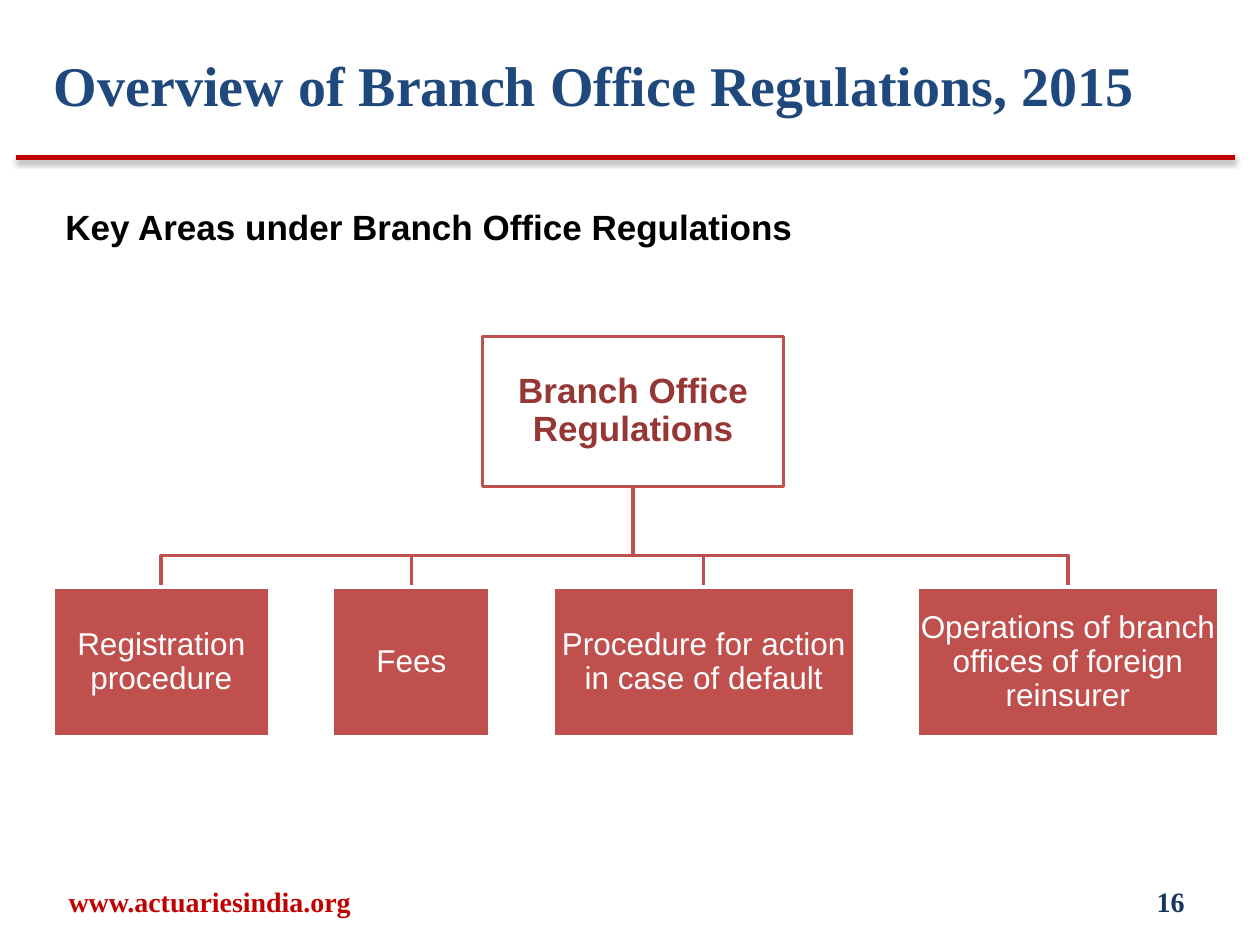
from dataclasses import dataclass
from lxml.etree import SubElement
from pptx import Presentation
from pptx.dml.color import RGBColor
from pptx.enum.shapes import MSO_CONNECTOR, MSO_SHAPE
from pptx.enum.text import MSO_ANCHOR, PP_ALIGN
from pptx.oxml import parse_xml
from pptx.oxml.ns import nsdecls, qn
from pptx.util import Inches, Pt


@dataclass(frozen=True)
class Theme:
    serif: str = "Times New Roman"
    sans: str = "Arial"
    navy: str = "1F497D"
    deep: str = "17375E"
    red: str = "C00000"
    brick: str = "C0504D"
    wine: str = "953735"
    white: str = "FFFFFF"
    black: str = "000000"
    title: int = 32
    head: int = 20
    leaf: int = 18
    foot: int = 16
    rule: int = 3
    edge: int = 2


T = Theme()
LEFT, MID, RIGHT = PP_ALIGN.LEFT, PP_ALIGN.CENTER, PP_ALIGN.RIGHT
TOP, CORE = MSO_ANCHOR.TOP, MSO_ANCHOR.MIDDLE

LABELS = [
    ("Overview of Branch Office Regulations, 2015", (0.33, 0.33, 8.92, 0.67),
     T.serif, T.title, T.navy, LEFT, CORE),
    ("Key Areas under Branch Office Regulations", (0.42, 1.58, 7.92, 0.44),
     T.sans, T.head, T.black, LEFT, TOP),
    ("www.actuariesindia.org", (0.08, 6.95, 3.17, 0.4),
     T.serif, T.foot, T.red, MID, CORE),
    ("16", (7.17, 6.95, 2.33, 0.4), T.serif, T.foot, T.deep, RIGHT, CORE),
]
ROOT = ("Branch Office Regulations", 3.83, 2.67, 2.39)
LEAVES = [
    ("Registration procedure", 1.72),
    ("Fees", 1.25),
    ("Procedure for action in case of default", 2.39),
    ("Operations of branch offices of foreign reinsurer", 2.39),
]
START, ROW, GAP, TALL, BUS = 0.42, 4.66, 0.5, 1.19, 4.41


def write(shape, text, face, size, color, bold, align, anchor):
    frame = shape.text_frame
    frame.word_wrap = True
    frame.vertical_anchor = anchor
    para = frame.paragraphs[0]
    para.text = text
    para.alignment = align
    font = para.font
    font.name, font.size, font.bold = face, Pt(size), bold
    font.color.rgb = RGBColor.from_string(color)
    return frame, para


def stroke(line, color, width):
    line.color.rgb = RGBColor.from_string(color)
    line.width = Pt(width)


def label(slide, text, area, face, size, color, align, anchor):
    box = slide.shapes.add_textbox(*map(Inches, area))
    write(box, text, face, size, color, True, align, anchor)


def rule(slide):
    bar = slide.shapes.add_connector(
        MSO_CONNECTOR.STRAIGHT, Inches(0.13), Inches(1.25), Inches(9.8), Inches(1.25))
    stroke(bar.line, T.red, T.rule)
    glow = SubElement(bar._element.spPr, qn("a:effectLst"))
    glow.append(parse_xml(
        f'<a:outerShdw {nsdecls("a")} blurRad="{Pt(3.1)}" dist="{Pt(1.6)}" '
        f'dir="5400000" rotWithShape="0"><a:srgbClr val="{T.black}">'
        '<a:alpha val="38000"/></a:srgbClr></a:outerShdw>'))


def node(slide, text, left, top, width, fill, edge, size, color, bold):
    box = slide.shapes.add_shape(
        MSO_SHAPE.RECTANGLE, *map(Inches, (left, top, width, TALL)))
    box.shadow.inherit = False
    box.fill.solid()
    box.fill.fore_color.rgb = RGBColor.from_string(fill)
    stroke(box.line, edge, T.edge)
    frame, para = write(box, text, T.sans, size, color, bold, MID, CORE)
    frame.margin_left = frame.margin_right = Inches(0.01)
    frame.margin_top = frame.margin_bottom = Inches(0.01)
    para.line_spacing = 0.9


def branch(slide, hub, base, end):
    pen = slide.shapes.build_freeform(Inches(hub), Inches(base))
    turns = [(hub, BUS), (end, BUS), (end, ROW)]
    pen.add_line_segments([(Inches(x), Inches(y)) for x, y in turns], close=False)
    path = pen.convert_to_shape()
    path.shadow.inherit = False
    path.fill.background()
    stroke(path.line, T.brick, T.edge)


def chart(slide):
    name, left, top, width = ROOT
    spots, x = [], START
    for text, wide in LEAVES:
        spots.append((text, x, wide))
        x += wide + GAP
    for text, x, wide in reversed(spots):
        branch(slide, left + width / 2, top + TALL, x + wide / 2)
    node(slide, name, left, top, width, T.white, T.brick, T.head, T.wine, True)
    for text, x, wide in spots:
        node(slide, text, x, ROW, wide, T.brick, T.white, T.leaf, T.white, False)


def main():
    """Build the branch office regulations slide."""
    deck = Presentation()
    deck.slide_width, deck.slide_height = Inches(10), Inches(7.5)
    slide = deck.slides.add_slide(deck.slide_layouts[6])
    rule(slide)
    for item in LABELS:
        label(slide, *item)
    chart(slide)
    deck.save("out.pptx")


if __name__ == "__main__":
    main()
